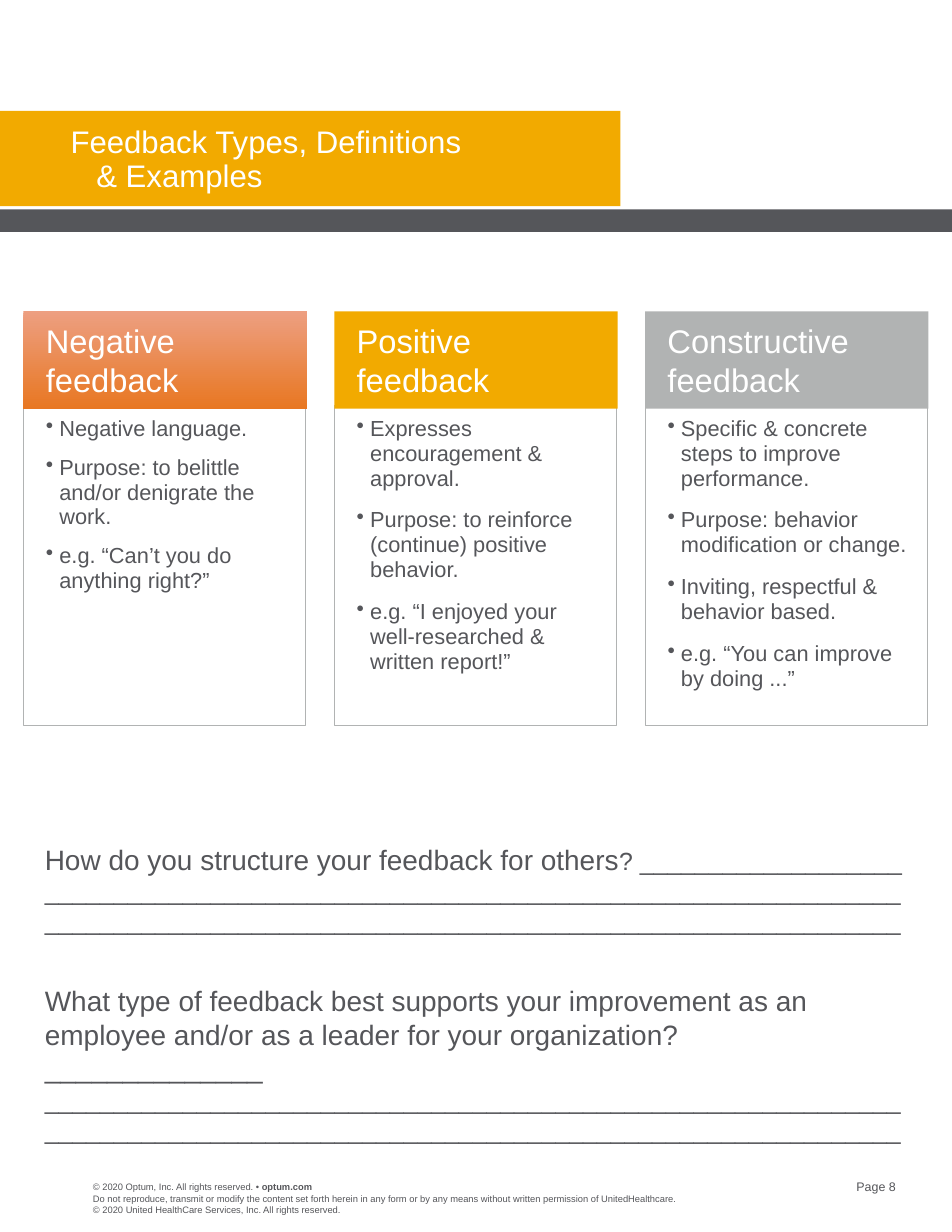
"""Builds the worksheet page on feedback types, definitions and examples."""
import pptx
import pptx.dml.color
import pptx.enum.shapes
import pptx.enum.text
import pptx.oxml.ns
import pptx.util
from lxml import etree

Inches = pptx.util.Inches
Pt = pptx.util.Pt
RGB = pptx.dml.color.RGBColor
Align = pptx.enum.text.PP_ALIGN
Anchor = pptx.enum.text.MSO_ANCHOR

GOLD = RGB(0xF2, 0xAA, 0x00)
SLATE = RGB(0x55, 0x56, 0x5A)
SILVER = RGB(0xB1, 0xB3, 0xB3)
PEACH = RGB(0xED, 0x9F, 0x81)
ORANGE = RGB(0xE8, 0x77, 0x22)
WHITE = RGB(0xFF, 0xFF, 0xFF)

BLANK = "_" * 124
CARDS = [
    ("Negative\nfeedback", (PEACH, ORANGE), 3, [
        "Negative language.",
        "Purpose: to belittle and/or denigrate the work.",
        "e.g. “Can’t you do anything right?”"]),
    ("Positive\nfeedback", GOLD, 4.9, [
        "Expresses encouragement & approval.",
        "Purpose: to reinforce (continue) positive behavior.",
        "e.g. “I enjoyed your well-researched & written report!”"]),
    ("Constructive\nfeedback", SILVER, 4.9, [
        "Specific & concrete steps to improve performance.",
        "Purpose: behavior modification or change.",
        "Inviting, respectful & behavior based.",
        "e.g. “You can improve by doing ...”"]),
]


def write(frame, text, size=14, color=SLATE, align=Align.LEFT, anchor=Anchor.TOP,
          pad=(0, 0, 0, 0), line=1.0, before=0, after=0, hang=0, bullet=None):
    """Fill a frame with paragraphs, each a string or a list of (text, size, bold)."""
    frame.word_wrap = True
    frame.auto_size = pptx.enum.text.MSO_AUTO_SIZE.NONE
    frame.vertical_anchor = anchor
    (frame.margin_left, frame.margin_top,
     frame.margin_right, frame.margin_bottom) = map(Inches, pad)
    for num, part in enumerate([text] if isinstance(text, str) else text):
        para = frame.add_paragraph() if num else frame.paragraphs[0]
        props = para._p.get_or_add_pPr()
        props.set("marL", str(Inches(hang)))
        props.set("indent", str(-Inches(hang)))
        mark = etree.SubElement(props, pptx.oxml.ns.qn("a:buChar" if bullet else "a:buNone"))
        if bullet:
            mark.set("char", bullet)
        para.alignment = align
        para.line_spacing = line
        para.space_before = Pt(before if num else 0)
        para.space_after = Pt(after)
        for words, points, bold in [(part, size, False)] if isinstance(part, str) else part:
            for row, piece in enumerate(words.split("\n")):
                if row:
                    para.add_line_break()
                run = para.add_run()
                run.text = piece
                run.font.name = "Arial"
                run.font.size = Pt(points)
                run.font.bold = bold
                run.font.color.rgb = color


class Page:
    """Holds the style and the current slide."""

    def __init__(self, deck):
        self.slide = deck.slides.add_slide(deck.slide_layouts[1])
        self.shapes = self.slide.shapes

    def place(self, shape, box):
        """Move a placeholder to a box."""
        shape.left, shape.top, shape.width, shape.height = map(Inches, box)
        return shape.text_frame

    def title(self, box, text, **form):
        """Set the title."""
        write(self.place(self.shapes.title, box), text, **form)

    def body(self, box, text, **form):
        """Set the body."""
        write(self.place(self.slide.placeholders[1], box), text, **form)

    def label(self, box, text, **form):
        """Add a text box."""
        write(self.shapes.add_textbox(*map(Inches, box)).text_frame, text, **form)

    def rect(self, box, fill=None, edge=None):
        """Add a rectangle with a plain, graded or empty fill."""
        kind = pptx.enum.shapes.MSO_SHAPE.RECTANGLE
        shape = self.shapes.add_shape(kind, *map(Inches, box))
        shape.shadow.inherit = False
        if fill is None:
            shape.fill.background()
        elif isinstance(fill, RGB):
            shape.fill.solid()
            shape.fill.fore_color.rgb = fill
        else:
            shape.fill.gradient()
            shape.fill.gradient_angle = 270
            for stop, tone in zip(shape.fill.gradient_stops, fill):
                stop.color.rgb = tone
        if edge is None:
            shape.line.fill.background()
        else:
            shape.line.color.rgb = edge
            shape.line.width = Pt(0.5)
        return shape

    def card(self, left, head, fill, after, items):
        """Add a headed panel with a bullet list."""
        panel = self.rect((left, 3.62, 2.52, 2.86), edge=SILVER)
        write(panel.text_frame, items, pad=(0.2, 0.1, 0.1, 0.1), line=0.95,
              before=6, after=after, hang=0.12, bullet="•")
        top = self.rect((left, 2.78, 2.53, 0.87), fill)
        write(top.text_frame, head, size=21, color=WHITE, anchor=Anchor.MIDDLE,
              pad=(0.2, 0.05, 0.1, 0.05))

    def back(self, *shapes):
        """Send shapes behind the placeholders."""
        for spot, shape in enumerate(shapes):
            self.shapes._spTree.insert(2 + spot, shape._element)


def main():
    """Build and save the page."""
    deck = pptx.Presentation()
    deck.slide_width, deck.slide_height = Inches(8.5), Inches(11)
    page = Page(deck)
    page.back(page.rect((0, 0.99, 5.54, 0.85), GOLD),
              page.rect((0, 1.87, 8.5, 0.2), SLATE))
    page.title((0.63, 1.13, 3.8, 0.61), "Feedback Types, Definitions\n& Examples",
               size=20, color=WHITE, line=0.9, hang=0.23)
    page.body((0.4, 7.52, 7.67, 2.4), [
        [("How do you structure your feedback for others", 18, False),
         ("? " + "_" * 19 + " " + BLANK, 16, False)],
        [("What type of feedback best supports your improvement as an employee "
          "and/or as a leader for your organization? " + "_" * 14 + " ", 18, False),
         (BLANK, 16, False)]], before=31)
    for num, card in enumerate(CARDS):
        page.card(0.21 + 2.775 * num, *card)
    page.label((0.83, 10.55, 2, 0.1), [
        [("© 2020 Optum, Inc. All rights reserved. • ", 6, False),
         ("optum.com", 6, True)]])
    page.label((0.83, 10.65, 5.25, 0.2),
               "Do not reproduce, transmit or modify the content set forth herein in any "
               "form or by any means without written permission of UnitedHealthcare. "
               "© 2020 United HealthCare Services, Inc. All rights reserved.", size=6)
    page.label((7.19, 10.53, 0.81, 0.13), "Page 8", size=8, align=Align.RIGHT)
    deck.save("out.pptx")


if __name__ == "__main__":
    main()
